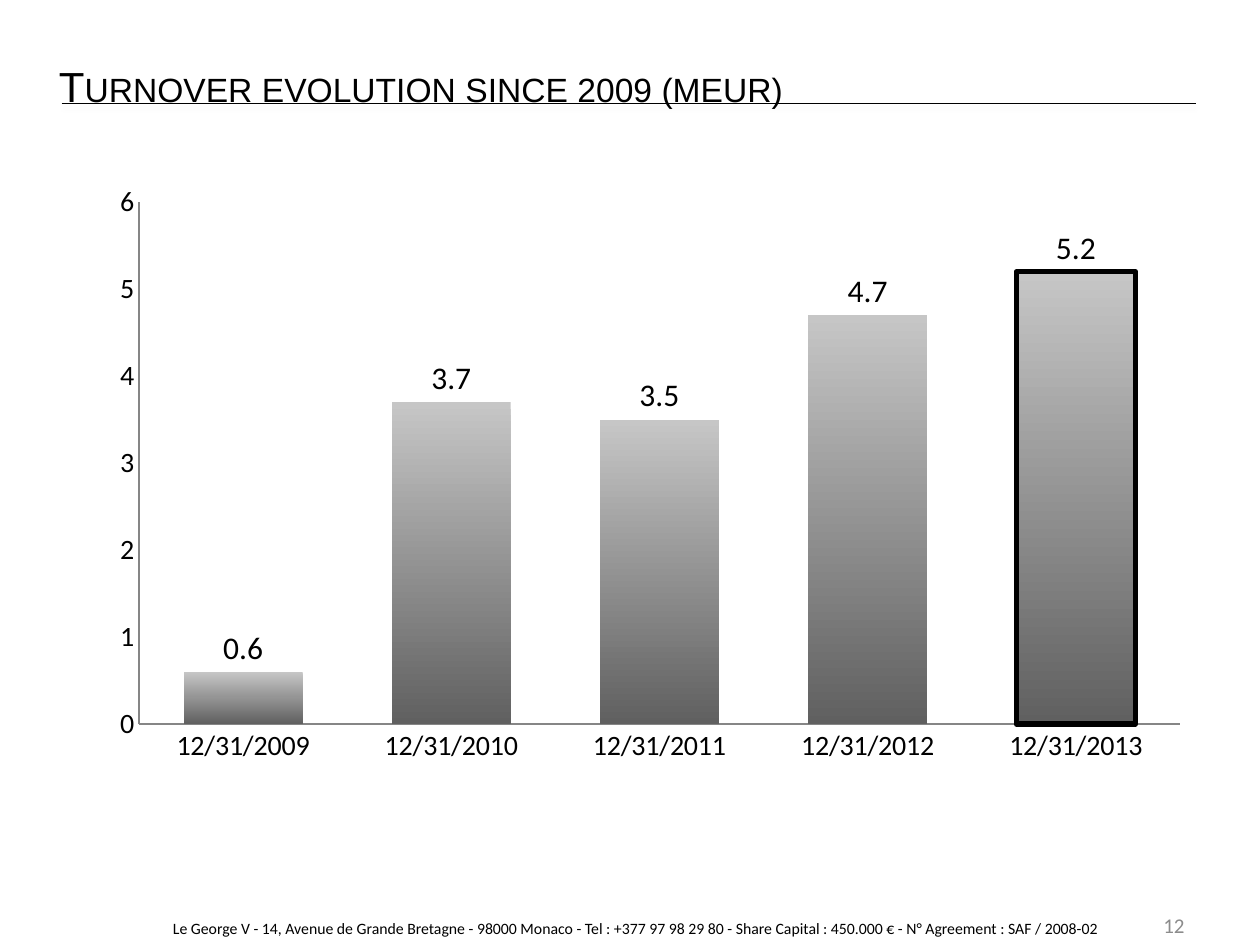
from lxml.etree import SubElement
from pptx import Presentation
from pptx.chart.data import CategoryChartData
from pptx.dml.color import RGBColor
from pptx.enum.chart import XL_CHART_TYPE, XL_LABEL_POSITION, XL_TICK_MARK
from pptx.enum.shapes import MSO_CONNECTOR
from pptx.enum.text import MSO_ANCHOR, PP_ALIGN
from pptx.oxml import parse_xml
from pptx.oxml.ns import nsdecls, qn
from pptx.util import Inches, Pt

TITLE = "Turnover evolution since 2009 (meur)"
FOOTER = ("Le George V - 14, Avenue de Grande Bretagne - 98000 Monaco - "
          "Tel : +377 97 98 29 80 - Share Capital : 450.000 € - "
          "N° Agreement : SAF / 2008-02")
PAGE = "12"
TURNOVER = {
    "12/31/2009": 0.6,
    "12/31/2010": 3.7,
    "12/31/2011": 3.5,
    "12/31/2012": 4.7,
    "12/31/2013": 5.2,
}
PLOT_AREA = {"x": 0.066, "y": 0.028, "w": 0.919, "h": 0.854}
THEME = {
    "text": "000000", "muted": "8C8C8C", "axis": "868686",
    "bar_top": "C6C6C6", "bar_bottom": "606060",
    "head": "Arial", "body": "Calibri",
    "title": 24, "labels": 18, "ticks": 16, "page": 12, "footer": 9,
}


def color(key):
    return RGBColor.from_string(THEME[key])


def style_font(font, size, face="body", fill="text"):
    font.size = Pt(THEME[size])
    font.name = THEME[face]
    font.color.rgb = color(fill)


def add_text(slide, text, box, size, face="body", fill="text",
             align=PP_ALIGN.LEFT, anchor=MSO_ANCHOR.MIDDLE, small_caps=False):
    tf = slide.shapes.add_textbox(*map(Inches, box)).text_frame
    tf.word_wrap = True
    tf.vertical_anchor = anchor
    tf.margin_top = tf.margin_bottom = 0
    p = tf.paragraphs[0]
    p.alignment = align
    r = p.add_run()
    r.text = text
    style_font(r.font, size, face, fill)
    if small_caps:
        r.font._element.set("cap", "small")


def add_title_rule(slide):
    line = slide.shapes.add_connector(
        MSO_CONNECTOR.STRAIGHT, *map(Inches, (0.49, 0.82, 9.49, 0.82)))
    line.line.color.rgb = color("text")
    line.line.width = Pt(0.75)
    line._element.spPr.append(parse_xml(
        f'<a:effectLst {nsdecls("a")}>'
        f'<a:outerShdw blurRad="{Pt(3.1)}" dist="{Pt(1.6)}" dir="5400000" rotWithShape="0">'
        f'<a:srgbClr val="{THEME["text"]}"><a:alpha val="38000"/></a:srgbClr>'
        '</a:outerShdw></a:effectLst>'))


def shade_bar(fmt):
    """Fill from light at the top to dark at the foot."""
    fmt.fill.gradient()
    fmt.fill.gradient_angle = 270
    for stop, key in zip(fmt.fill.gradient_stops, ("bar_top", "bar_bottom")):
        stop.color.rgb = color(key)


def place_plot(chart):
    """Fix the inner plot area as fractions of the chart."""
    plot_area = chart._chartSpace.chart.plotArea
    for old in plot_area.findall(qn("c:layout")):
        plot_area.remove(old)
    layout = parse_xml(f'<c:layout {nsdecls("c")}/>')
    manual = SubElement(layout, qn("c:manualLayout"))
    settings = {"layoutTarget": "inner", "xMode": "edge", "yMode": "edge", **PLOT_AREA}
    for tag, value in settings.items():
        SubElement(manual, qn(f"c:{tag}")).set("val", str(value))
    plot_area.insert(0, layout)


def add_turnover_chart(slide):
    data = CategoryChartData(number_format="0.0")
    data.categories = list(TURNOVER)
    data.add_series("Series 1", list(TURNOVER.values()))
    chart = slide.shapes.add_chart(
        XL_CHART_TYPE.COLUMN_CLUSTERED,
        *map(Inches, (0.51, 1.47, 8.99, 4.85)), data).chart
    chart.has_legend = chart.has_title = False
    style_font(chart.font, "labels")
    place_plot(chart)

    for axis in (chart.category_axis, chart.value_axis):
        axis.has_major_gridlines = False
        axis.major_tick_mark = axis.minor_tick_mark = XL_TICK_MARK.NONE
        axis.format.line.color.rgb = color("axis")
        axis.format.line.width = Pt(0.75)
        style_font(axis.tick_labels.font, "ticks")
    axis = chart.value_axis
    axis.minimum_scale, axis.maximum_scale, axis.major_unit = 0, 6, 1
    axis.tick_labels.number_format = "0"
    axis.tick_labels.number_format_is_linked = False

    plot = chart.plots[0]
    plot.gap_width = 75
    plot.vary_by_categories = False
    series = plot.series[0]
    series.invert_if_negative = False
    latest = series.points[len(TURNOVER) - 1].format
    shade_bar(series.format)
    shade_bar(latest)
    latest.line.color.rgb = color("text")
    latest.line.width = Pt(3)

    labels = series.data_labels
    labels.show_value = True
    labels.position = XL_LABEL_POSITION.OUTSIDE_END
    labels.number_format = "0.0"
    labels.number_format_is_linked = False
    style_font(labels.font, "labels")


def main():
    prs = Presentation()
    prs.slide_width, prs.slide_height = Inches(10), Inches(7.5)
    slide = prs.slides.add_slide(prs.slide_layouts[6])
    add_title_rule(slide)
    add_text(slide, FOOTER, (0.08, 7.25, 9.92, 0.23), "footer", align=PP_ALIGN.CENTER)
    add_text(slide, TITLE, (0.37, 0.48, 9, 0.4), "title", face="head",
             anchor=MSO_ANCHOR.TOP, small_caps=True)
    add_turnover_chart(slide)
    add_text(slide, PAGE, (7.17, 7.14, 2.33, 0.4), "page", fill="muted",
             align=PP_ALIGN.RIGHT)
    prs.save("out.pptx")


if __name__ == "__main__":
    main()
